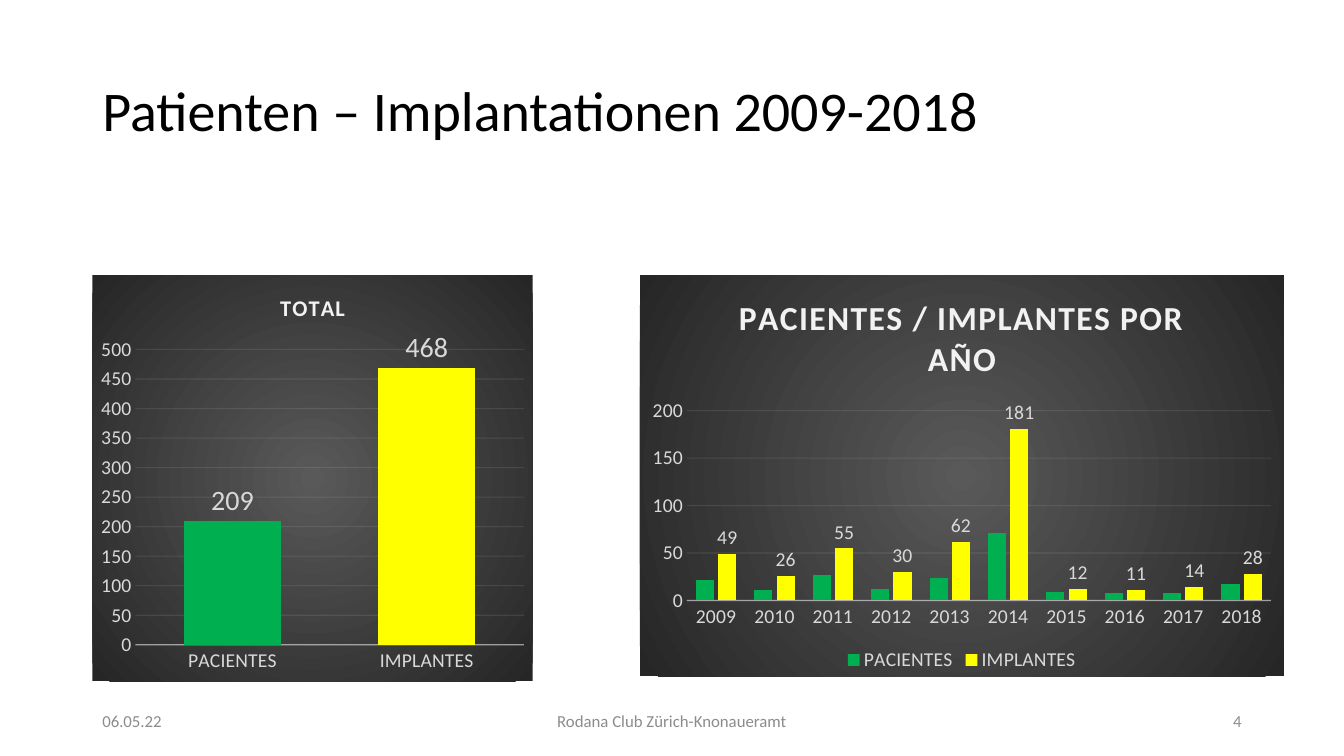
from pptx import Presentation
from pptx import util as u
from pptx.chart import data as d
from pptx.dml import color as c
from pptx.enum import chart as ch, text
from pptx.oxml import parse_xml
from pptx.oxml.ns import nsdecls

GREEN, YELLOW = "00B050", "FFFF00"
LIGHT, PALE, GREY = "D9D9D9", "F2F2F2", "8C8C8C"
LEFT, MID, RIGHT = text.PP_ALIGN.LEFT, text.PP_ALIGN.CENTER, text.PP_ALIGN.RIGHT


def paint(code):
    return c.RGBColor.from_string(code)


def style(font, size, tint, bold=False):
    font.name = "Calibri"
    font.size = u.Pt(size)
    font.bold = bold
    font.color.rgb = paint(tint)


def write(frame, words, size=12, tint=GREY, bold=False, align=LEFT, lead=None, space=0):
    para = frame.paragraphs[0]
    para.alignment = align
    if lead:
        para.line_spacing = lead
    run = para.add_run()
    run.text = words
    style(run.font, size, tint, bold)
    if space:
        run.font._element.set("spc", str(space * 100))


class Deck:
    def __init__(self, wide, high):
        self.show = Presentation()
        self.show.slide_width, self.show.slide_height = u.Pt(wide), u.Pt(high)
        self.slide = self.show.slides.add_slide(self.show.slide_layouts[5])

    def title(self, words, box):
        shape = self.slide.shapes.title
        shape.left, shape.top, shape.width, shape.height = map(u.Pt, box)
        frame = shape.text_frame
        frame.word_wrap = True
        frame.auto_size = text.MSO_AUTO_SIZE.NONE
        frame.vertical_anchor = text.MSO_ANCHOR.MIDDLE
        write(frame, words, size=40, tint="000000", lead=0.9)

    def label(self, words, box, align):
        frame = self.slide.shapes.add_textbox(*map(u.Pt, box)).text_frame
        frame.word_wrap = True
        frame.vertical_anchor = text.MSO_ANCHOR.MIDDLE
        write(frame, words, align=align)

    def chart(self, head, box, cats, rows, size, top, step):
        data = d.CategoryChartData()
        data.categories = cats
        for name, vals in rows:
            data.add_series(name, vals)
        kind = ch.XL_CHART_TYPE.COLUMN_CLUSTERED
        chart = self.slide.shapes.add_chart(kind, *map(u.Pt, box), data).chart
        style(chart.font, 14, LIGHT)
        chart.has_title = True
        write(chart.chart_title.text_frame, head, size=size, tint=PALE,
              bold=True, align=MID, space=1)
        chart.chart_title.include_text_in_layout = False
        chart.has_legend = len(rows) > 1
        if chart.has_legend:
            chart.legend.position = ch.XL_LEGEND_POSITION.BOTTOM
            chart.legend.include_in_layout = False
            style(chart.legend.font, 14, LIGHT)
        plot = chart.plots[0]
        plot.gap_width, plot.overlap = 100, -24
        plot.vary_by_categories = False
        self.axes(chart, top, step)
        self.ground(chart)
        return plot

    def axes(self, chart, top, step):
        cat, val = chart.category_axis, chart.value_axis
        for axis in (cat, val):
            axis.major_tick_mark = axis.minor_tick_mark = ch.XL_TICK_MARK.NONE
            style(axis.tick_labels.font, 14, LIGHT)
        val.minimum_scale, val.maximum_scale, val.major_unit = 0, top, step
        val.has_major_gridlines = True
        val.format.line.fill.background()
        for line, width in ((cat.format.line, 1), (val.major_gridlines.format.line, 0.75)):
            line.width = u.Pt(width)
            line.color.rgb = paint(PALE)
        for spot, share in (("catAx", 54), ("majorGridlines", 10)):
            for tone in chart.element.xpath(f".//c:{spot}/c:spPr/a:ln//a:srgbClr"):
                tone.append(parse_xml(f'<a:alpha {nsdecls("a")} val="{share * 1000}"/>'))

    def ground(self, chart):
        chart.element.xpath("c:chart")[0].addnext(parse_xml(
            f'<c:spPr {nsdecls("c", "a")}><a:gradFill><a:gsLst>'
            '<a:gs pos="0"><a:srgbClr val="595959"/></a:gs>'
            '<a:gs pos="100000"><a:srgbClr val="262626"/></a:gs></a:gsLst>'
            '<a:path path="circle">'
            '<a:fillToRect l="50000" t="50000" r="50000" b="50000"/></a:path>'
            '</a:gradFill><a:ln><a:noFill/></a:ln></c:spPr>'))

    def fill(self, part, tint):
        part.format.fill.solid()
        part.format.fill.fore_color.rgb = paint(tint)

    def values(self, series, size):
        marks = series.data_labels
        marks.show_value = True
        marks.position = ch.XL_LABEL_POSITION.OUTSIDE_END
        style(marks.font, size, LIGHT)


def main():
    deck = Deck(960, 540)
    deck.title("Patienten – Implantationen 2009-2018", (66, 28.75, 828, 104.4))

    total = deck.chart("TOTAL", (66, 196.5, 314.5, 290), ["PACIENTES", "IMPLANTES"],
                       [("Total", (209, 468))], 16, 500, 50)
    bars = total.series[0]
    for i, tint in enumerate((GREEN, YELLOW)):
        deck.fill(bars.points[i], tint)
    deck.values(bars, 20)

    years = [str(y) for y in range(2009, 2019)]
    rows = [("PACIENTES", (22, 11, 27, 12, 24, 71, 9, 8, 8, 17)),
            ("IMPLANTES", (49, 26, 55, 30, 62, 181, 12, 11, 14, 28))]
    yearly = deck.chart("PACIENTES / IMPLANTES POR AÑO", (457, 196.5, 460, 286.5),
                        years, rows, 24, 200, 50)
    for series, tint in zip(yearly.series, (GREEN, YELLOW)):
        deck.fill(series, tint)
    deck.values(yearly.series[1], 14)

    for words, left, wide, align in (("06.05.22", 66, 216, LEFT),
                                     ("Rodana Club Zürich-Knonaueramt", 318, 324, MID),
                                     ("4", 678, 216, RIGHT)):
        deck.label(words, (left, 500.5, wide, 28.75), align)
    deck.show.save("out.pptx")


if __name__ == "__main__":
    main()
